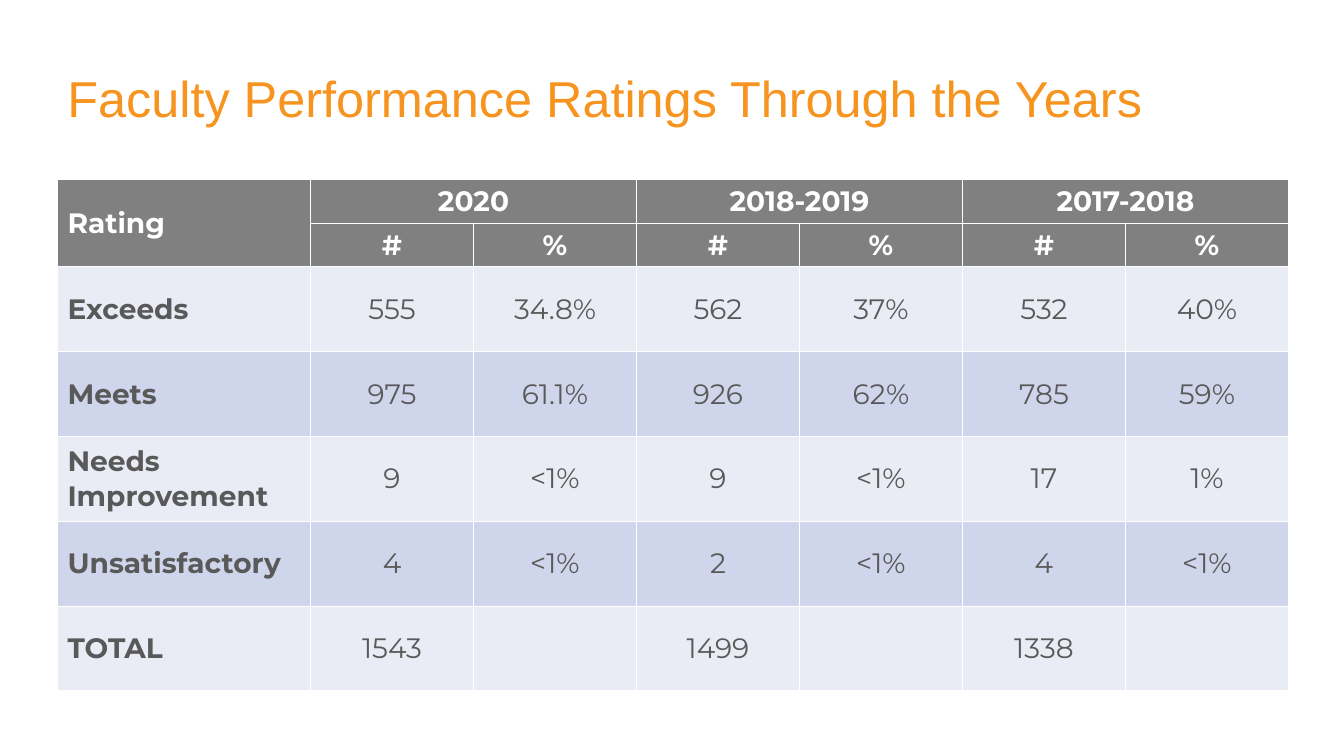
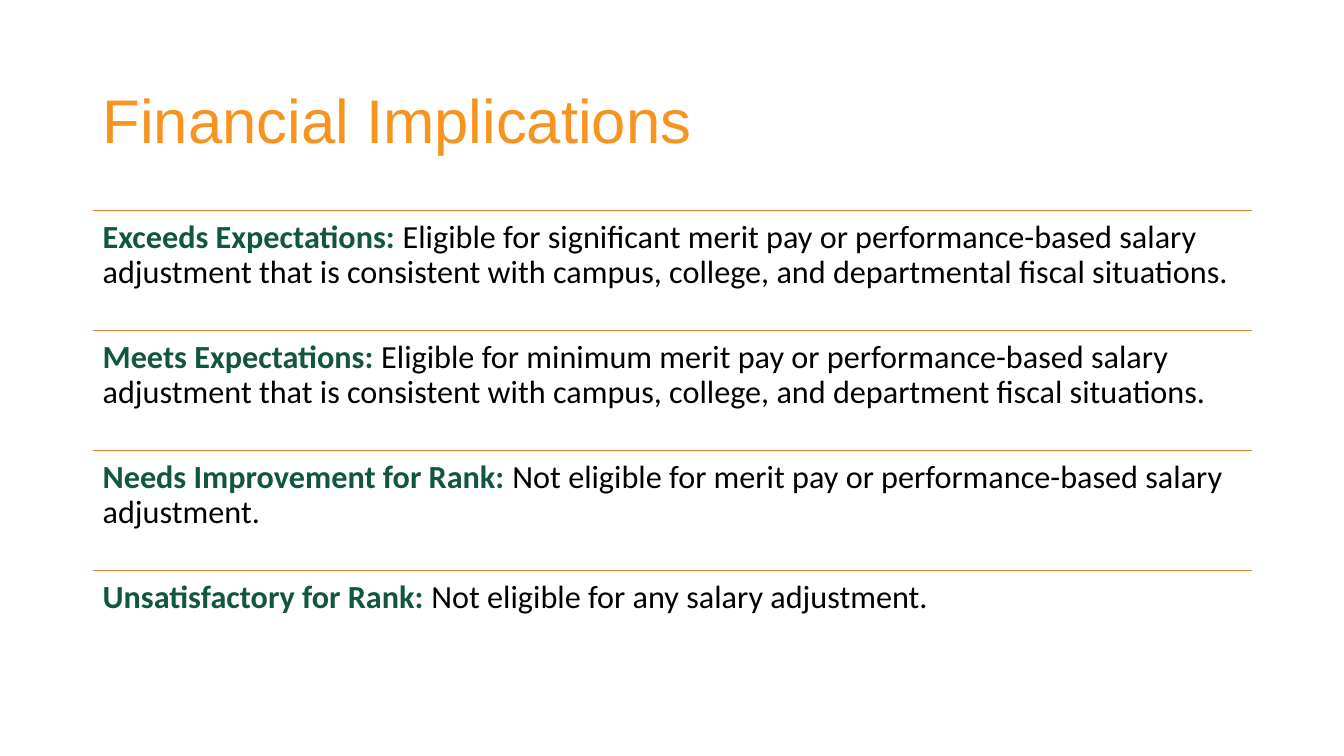
import pptx
import pptx.util
import pptx.dml.color
import pptx.enum.shapes
import pptx.enum.text
import pptx.oxml
import pptx.oxml.ns

Inches = pptx.util.Inches
Pt = pptx.util.Pt
ALIGN = pptx.enum.text.PP_ALIGN
ANCHOR = pptx.enum.text.MSO_ANCHOR

COLORS = {
    "title": "F6941F",
    "header": "808080",
    "header_text": "FFFFFF",
    "band_light": "E9EBF5",
    "band_dark": "CFD5EA",
    "border": "FFFFFF",
    "table_text": "595959",
    "rule": "ED7D31",
    "term": "115740",
    "body": "000000",
}

YEARS = ["2020", "2018-2019", "2017-2018"]
RATINGS = [
    ["Exceeds", "555", "34.8%", "562", "37%", "532", "40%"],
    ["Meets", "975", "61.1%", "926", "62%", "785", "59%"],
    ["Needs Improvement", "9", "<1%", "9", "<1%", "17", "1%"],
    ["Unsatisfactory", "4", "<1%", "2", "<1%", "4", "<1%"],
    ["TOTAL", "1543", "", "1499", "", "1338", ""],
]
IMPLICATIONS = [
    ("Exceeds Expectations: ",
     "Eligible for significant merit pay or performance-based salary adjustment "
     "that is consistent with campus, college, and departmental fiscal situations."),
    ("Meets Expectations: ",
     "Eligible for minimum merit pay or performance-based salary adjustment "
     "that is consistent with campus, college, and department fiscal situations."),
    ("Needs Improvement for Rank: ",
     "Not eligible for merit pay or performance-based salary adjustment."),
    ("Unsatisfactory for Rank: ",
     "Not eligible for any salary adjustment."),
]


def rgb(name):
    return pptx.dml.color.RGBColor.from_string(COLORS[name])


def format_run(run, font, size, color, bold=False):
    run.font.name = font
    run.font.size = Pt(size)
    run.font.bold = bold
    run.font.color.rgb = rgb(color)


def add_text_frame(slide, left, top, width, height):
    box = slide.shapes.add_textbox(
        Inches(left), Inches(top), Inches(width), Inches(height))
    box.text_frame.word_wrap = True
    box.text_frame.paragraphs[0].line_spacing = 0.9
    return box.text_frame


def add_title(slide, text, left, top, width, height, size):
    frame = add_text_frame(slide, left, top, width, height)
    frame.vertical_anchor = ANCHOR.MIDDLE
    heading = frame.paragraphs[0]
    heading.text = text
    format_run(heading.runs[0], "Arial", size, "title")


def set_borders(cell):
    properties = cell._tc.get_or_add_tcPr()
    for position, side in enumerate(("lnL", "lnR", "lnT", "lnB")):
        border = pptx.oxml.parse_xml(
            f'<a:{side} {pptx.oxml.ns.nsdecls("a")} w="{Pt(1)}"><a:solidFill>'
            f'<a:srgbClr val="{COLORS["border"]}"/></a:solidFill></a:{side}>')
        properties.insert(position, border)


def style_cell(cell, text, fill, color, bold, centered):
    cell.fill.solid()
    cell.fill.fore_color.rgb = rgb(fill)
    cell.vertical_anchor = ANCHOR.MIDDLE
    set_borders(cell)
    if text:
        paragraph = cell.text_frame.paragraphs[0]
        paragraph.text = text
        paragraph.alignment = ALIGN.CENTER if centered else ALIGN.LEFT
        format_run(paragraph.runs[0], "Montserrat", 20, color, bold)


def add_ratings_table(slide, left, top, width, height):
    header_rows = [["Rating"], [""]]
    for year in YEARS:
        header_rows[0] += [year, ""]
        header_rows[1] += ["#", "%"]
    rows = header_rows + RATINGS
    table = slide.shapes.add_table(
        len(rows), len(rows[0]), Inches(left), Inches(top),
        Inches(width), Inches(height)).table

    # Wide label column; each header row is half a rating row
    label_width = 2.51
    value_width = (width - label_width) / (len(rows[0]) - 1)
    for index, column in enumerate(table.columns):
        column.width = Inches(value_width if index else label_width)
    rating_height = height / (len(RATINGS) + 1)
    for index, row in enumerate(table.rows):
        row.height = Inches(rating_height / 2 if index < 2 else rating_height)

    # Header and banded rating rows
    for r, values in enumerate(rows):
        is_header = r < 2
        band = "band_dark" if r % 2 else "band_light"
        for c, value in enumerate(values):
            style_cell(table.cell(r, c), value,
                       fill="header" if is_header else band,
                       color="header_text" if is_header else "table_text",
                       bold=is_header or c == 0, centered=c > 0)

    # Merged headings
    table.cell(0, 0).merge(table.cell(1, 0))
    for c in range(1, len(rows[0]), 2):
        table.cell(0, c).merge(table.cell(0, c + 1))


def add_rule(slide, left, top, width):
    rule = slide.shapes.add_connector(
        pptx.enum.shapes.MSO_CONNECTOR.STRAIGHT,
        Inches(left), Inches(top), Inches(left + width), Inches(top))
    rule.line.color.rgb = rgb("rule")
    rule.line.width = Pt(1)
    rule._element.spPr.append(
        pptx.oxml.parse_xml(f'<a:effectLst {pptx.oxml.ns.nsdecls("a")}/>'))


def add_implications(slide, left, top, width, height):
    step = height / len(IMPLICATIONS)
    for index, (term, meaning) in enumerate(IMPLICATIONS):
        y = top + index * step
        add_rule(slide, left, y, width)
        frame = add_text_frame(slide, left, y, width, step)
        frame.margin_left = frame.margin_right = Inches(0.1)
        frame.margin_top = frame.margin_bottom = Inches(0.1)
        paragraph = frame.paragraphs[0]
        for text, color, bold in ((term, "term", True), (meaning, "body", False)):
            run = paragraph.add_run()
            run.text = text
            format_run(run, "Calibri", 23, color, bold)


def main():
    deck = pptx.Presentation()
    deck.slide_width = Inches(13.33)
    deck.slide_height = Inches(7.5)
    blank = deck.slide_layouts[6]

    # Ratings by year
    ratings = deck.slides.add_slide(blank)
    add_title(ratings, "Faculty Performance Ratings Through the Years",
              0.57, 0.48, 11.5, 1.04, size=36)
    add_ratings_table(ratings, 0.57, 1.78, 12.21, 5.05)

    # Pay consequences of each rating
    finances = deck.slides.add_slide(blank)
    add_title(finances, "Financial Implications", 0.92, 0.5, 11.5, 1.45, size=44)
    add_implications(finances, 0.92, 2.09, 11.5, 4.76)

    deck.save("out.pptx")


if __name__ == "__main__":
    main()
